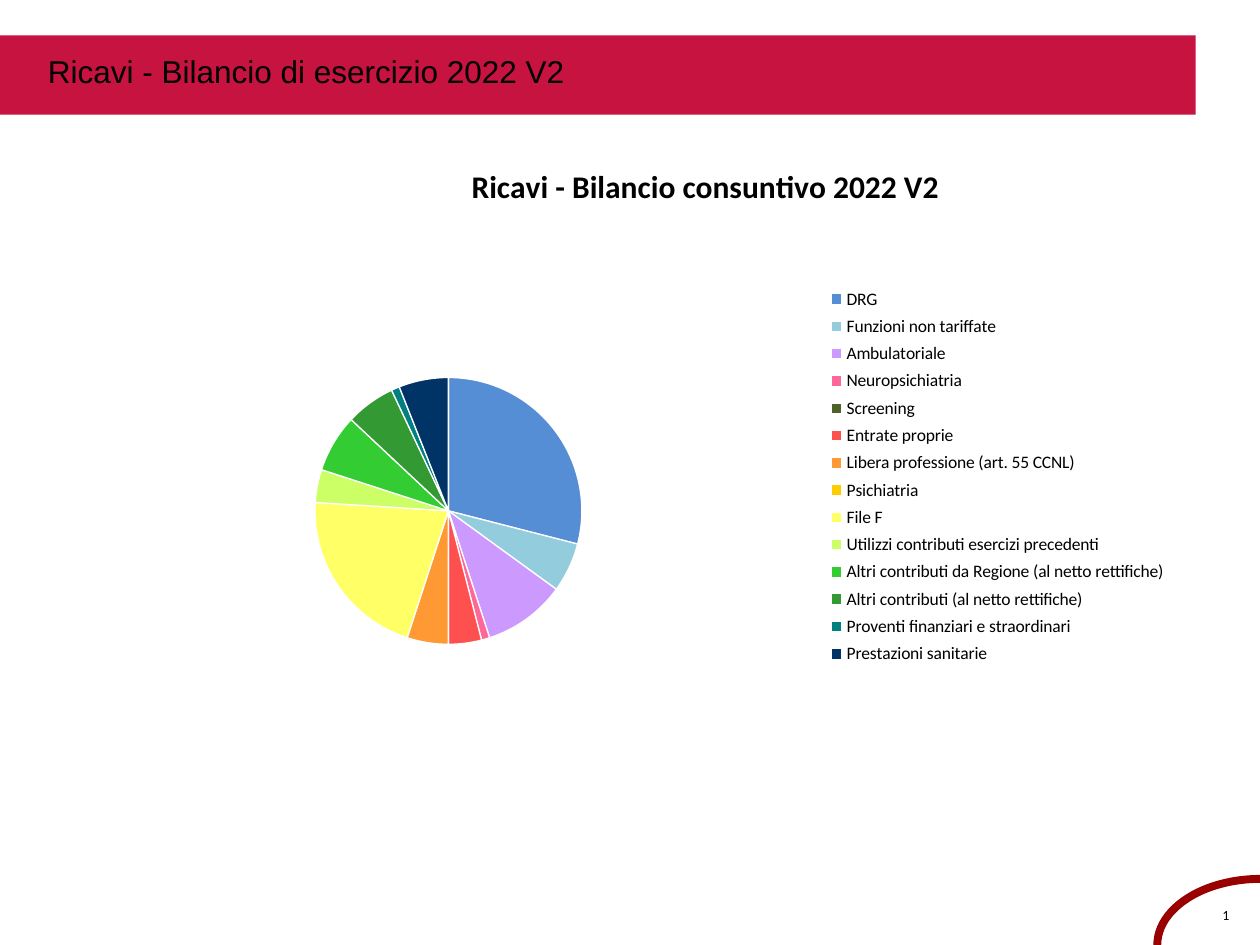
import pptx
import pptx.util
import pptx.chart.data
import pptx.dml.color
import pptx.enum.chart
import pptx.enum.shapes
import pptx.enum.text
import pptx.oxml

Pt = pptx.util.Pt
SHAPE = pptx.enum.shapes.MSO_SHAPE
ALIGN = pptx.enum.text.PP_ALIGN

COLOURS = {"band": "C6133F", "arc": "990000", "text": "000000", "edge": "FFFFFF"}

# Revenue item, share in percent, slice colour
REVENUES = [
    ("DRG", 29, "558ED5"),
    ("Funzioni non tariffate", 6, "93CDDD"),
    ("Ambulatoriale", 10, "CC99FF"),
    ("Neuropsichiatria", 1, "FF6699"),
    ("Screening", 0, "4F6228"),
    ("Entrate proprie", 4, "FF5050"),
    ("Libera professione (art. 55 CCNL)", 5, "FF9933"),
    ("Psichiatria", 0, "FFCC00"),
    ("File F", 21, "FFFF66"),
    ("Utilizzi contributi esercizi precedenti", 4, "CCFF66"),
    ("Altri contributi da Regione (al netto rettifiche)", 7, "33CC33"),
    ("Altri contributi (al netto rettifiche)", 6, "339933"),
    ("Proventi finanziari e straordinari", 1, "008080"),
    ("Prestazioni sanitarie", 6, "003366"),
]


def rgb(value):
    return pptx.dml.color.RGBColor.from_string(value)


def style_font(font, name, size, bold=False):
    font.name, font.size, font.bold = name, Pt(size), bold
    font.color.rgb = rgb(COLOURS["text"])


def set_layout(part, x, y, w=None, h=None, inner=False):
    """Place a chart part by fractions of the chart box."""
    for old in part.findall(pptx.oxml.ns.qn("c:layout")):
        part.remove(old)
    settings = [("layoutTarget", "inner")] if inner else []
    settings += [("xMode", "edge"), ("yMode", "edge")]
    settings += [(k, v) for k, v in zip("xywh", (x, y, w, h)) if v is not None]
    body = "".join(f'<c:{tag} val="{value}"/>' for tag, value in settings)
    layout = pptx.oxml.parse_xml(
        f'<c:layout {pptx.oxml.ns.nsdecls("c")}><c:manualLayout>{body}'
        "</c:manualLayout></c:layout>")
    # The layout follows the title text or legend position, and leads the plot area
    position = 0 if inner else 1
    part.insert(position, layout)


def add_corner(slide, left, top, width, height):
    """Quarter arc around the page number, in the bottom right corner."""
    # The unturned arc has swapped sides about the same centre
    centre_x, centre_y = left + width / 2, top + height / 2
    arc = slide.shapes.add_shape(
        SHAPE.ARC, Pt(centre_x - height / 2), Pt(centre_y - width / 2),
        Pt(height), Pt(width))
    arc.rotation = 270
    arc.shadow.inherit = False
    arc.fill.background()
    arc.line.color.rgb = rgb(COLOURS["arc"])
    arc.line.width = Pt(4.5)

    page_number = slide.shapes.add_textbox(
        Pt(left + 27.7), Pt(top + 14.8), Pt(23), Pt(11.5))
    frame = page_number.text_frame
    frame.word_wrap = True
    frame.margin_left = frame.margin_right = frame.margin_bottom = 0
    frame.margin_top = Pt(2)
    frame.text = "1"
    paragraph = frame.paragraphs[0]
    paragraph.alignment = ALIGN.CENTER
    paragraph.line_spacing = 0.93
    style_font(paragraph.runs[0].font, "Calibri", 8)


def add_heading(slide, left, top, width, height):
    """Coloured band with the slide title on it."""
    band = slide.shapes.add_shape(
        SHAPE.RECTANGLE, Pt(left), Pt(top), Pt(width), Pt(height))
    band.shadow.inherit = False
    band.fill.solid()
    band.fill.fore_color.rgb = rgb(COLOURS["band"])
    band.line.fill.background()

    title = slide.shapes.title
    title.left, title.top = Pt(left + 20.2), Pt(top + 5.8)
    title.width, title.height = Pt(448), Pt(51)
    frame = title.text_frame
    frame.text = "Ricavi - Bilancio di esercizio 2022 V2"
    frame.word_wrap = True
    frame.auto_size = pptx.enum.text.MSO_AUTO_SIZE.NONE
    frame.vertical_anchor = pptx.enum.text.MSO_ANCHOR.TOP
    frame.paragraphs[0].alignment = ALIGN.LEFT
    style_font(frame.paragraphs[0].runs[0].font, "Arial", 18)
    slide.shapes._spTree.append(title._element)  # in front of the band


def add_revenue_chart(slide, left, top, width, height):
    """Pie of revenue shares with a legend on the right."""
    data = pptx.chart.data.CategoryChartData()
    data.categories = [name for name, _, _ in REVENUES]
    data.add_series("Series 1", [share for _, share, _ in REVENUES])
    chart = slide.shapes.add_chart(
        pptx.enum.chart.XL_CHART_TYPE.PIE,
        Pt(left), Pt(top), Pt(width), Pt(height), data).chart
    style_font(chart.font, "Calibri", 10)

    heading = chart.chart_title.text_frame
    heading.text = "Ricavi - Bilancio consuntivo 2022 V2"
    style_font(heading.paragraphs[0].runs[0].font, "Calibri", 18, bold=True)
    set_layout(chart.chart_title._element, 0.36, 0.04)

    chart.has_legend = True
    chart.legend.position = pptx.enum.chart.XL_LEGEND_POSITION.RIGHT
    chart.legend.include_in_layout = False
    style_font(chart.legend.font, "Calibri", 10)
    set_layout(chart.legend._element, 0.66, 0.22, 0.31, 0.57)

    pie = chart.plots[0]
    pie.vary_by_categories = True
    set_layout(chart._chartSpace.chart.plotArea, 0.06, 0.36, 0.57, 0.39, inner=True)
    for index, (_, _, colour) in enumerate(REVENUES):
        piece = pie.series[0].points[index].format
        piece.fill.solid()
        piece.fill.fore_color.rgb = rgb(colour)
        piece.line.color.rgb = rgb(COLOURS["edge"])
        piece.line.width = Pt(0.75)


def main():
    deck = pptx.Presentation()
    deck.slide_width, deck.slide_height = Pt(720), Pt(540)
    slide = deck.slides.add_slide(deck.slide_layouts[5])
    add_corner(slide, 661.3, 502.2, 118, 75.6)
    add_heading(slide, 0, 20.2, 683.3, 45.4)
    add_revenue_chart(slide, 26, 75, 667.4, 391)
    deck.save("out.pptx")


if __name__ == "__main__":
    main()
